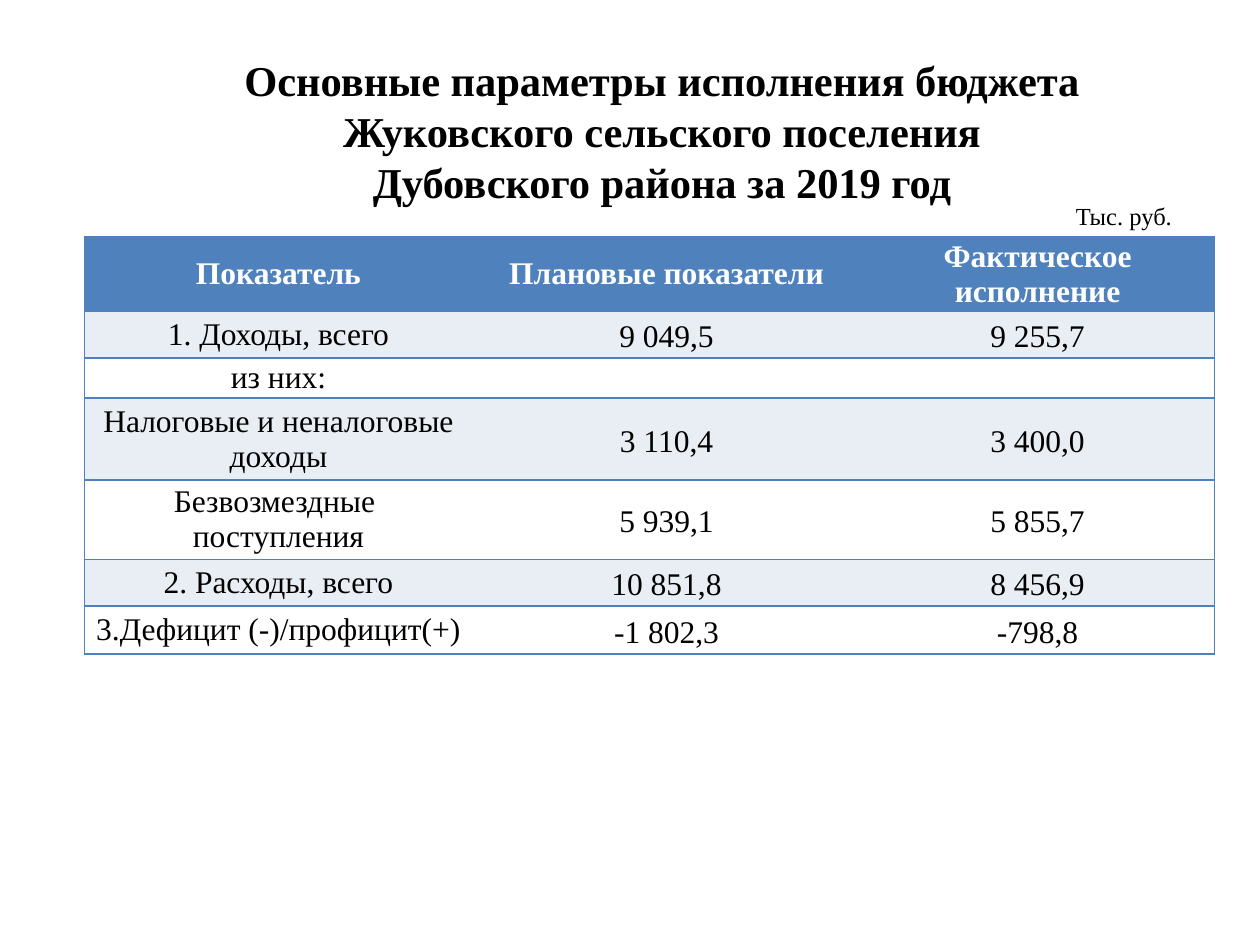
from pptx import Presentation
from pptx.dml.color import RGBColor
from pptx.enum.text import MSO_ANCHOR as Anchor, PP_ALIGN as Align
from pptx.oxml.ns import qn
from pptx.util import Inches, Pt
from lxml.etree import SubElement

BLUE = RGBColor(0x4F, 0x81, 0xBD)
PALE = RGBColor(0xE9, 0xED, 0xF4)
WHITE = RGBColor(0xFF, 0xFF, 0xFF)
BLACK = RGBColor(0, 0, 0)
FONT = "Times New Roman"

TITLE = ("Основные параметры исполнения бюджета\v"
         "Жуковского сельского поселения\v"
         "Дубовского района за 2019 год")
WIDTHS = [3.08, 3.08, 2.81]
HEIGHTS = [0.59, 0.37, 0.32, 0.65, 0.63, 0.37, 0.38]
ROWS = [
    ("Показатель", "Плановые показатели", "Фактическое исполнение"),
    ("1. Доходы, всего", "9 049,5", "9 255,7"),
    ("из них:", "", ""),
    ("Налоговые и неналоговые доходы", "3 110,4", "3 400,0"),
    ("Безвозмездные \nпоступления", "5 939,1", "5 855,7"),
    ("2. Расходы, всего", "10 851,8", "8 456,9"),
    ("3.Дефицит (-)/профицит(+)", "-1 802,3", "-798,8"),
]


def style(para, size, color=BLACK, bold=False, align=Align.CENTER):
    para.alignment = align
    font = para.font
    font.name, font.size, font.bold = FONT, Pt(size), bold
    font.color.rgb = color


def add_title(slide, left, top, width, height):
    title = slide.shapes.title
    title.left, title.top = Inches(left), Inches(top)
    title.width, title.height = Inches(width), Inches(height)
    frame = title.text_frame
    frame.text = TITLE
    frame.vertical_anchor = Anchor.TOP
    frame.margin_top, frame.margin_right = Inches(0.3), Inches(0.2)
    para = frame.paragraphs[0]
    style(para, 24.3, bold=True)
    para.line_spacing = Pt(29.1)


def add_unit(slide, left, top, width, height):
    box = slide.shapes.add_textbox(
        Inches(left), Inches(top), Inches(width), Inches(height))
    frame = box.text_frame
    frame.word_wrap = True
    frame.text = "Тыс. руб."
    style(frame.paragraphs[0], 14, align=Align.RIGHT)


def set_edges(cell, shown):
    """Draw the sides named in shown and hide the others."""
    props = cell._tc.get_or_add_tcPr()
    for side in "LRTB":
        line = SubElement(props, qn(f"a:ln{side}"), w=str(Pt(1)))
        if side in shown:
            fill = SubElement(line, qn("a:solidFill"))
            SubElement(fill, qn("a:srgbClr"), val=str(BLUE))
        else:
            SubElement(line, qn("a:noFill"))


def fill_cell(cell, text, row, col):
    head = row == 0
    set_edges(cell, "TB" + ("L", "", "R")[col])
    cell.fill.solid()
    cell.fill.fore_color.rgb = BLUE if head else PALE if row % 2 else WHITE
    cell.margin_left = cell.margin_right = 0
    cell.margin_top = cell.margin_bottom = 0
    cell.vertical_anchor = Anchor.MIDDLE
    cell.text = text
    for para in cell.text_frame.paragraphs:
        style(para, 18, WHITE if head else BLACK, head)
        if text and not head and col:
            para.line_spacing = 1.15


def add_budget(slide, left, top):
    frame = slide.shapes.add_table(
        len(ROWS), len(WIDTHS), Inches(left), Inches(top),
        Inches(sum(WIDTHS)), Inches(sum(HEIGHTS)))
    table = frame.table
    table.horz_banding = False
    for col, width in zip(table.columns, WIDTHS):
        col.width = Inches(width)
    for row, height in zip(table.rows, HEIGHTS):
        row.height = Inches(height)
    for r, texts in enumerate(ROWS):
        for c, text in enumerate(texts):
            fill_cell(table.cell(r, c), text, r, c)


def main():
    deck = Presentation()
    deck.slide_width, deck.slide_height = Inches(10), Inches(7.5)
    slide = deck.slides.add_slide(deck.slide_layouts[5])
    add_title(slide, 0.61, 0.13, 9.39, 1.02)
    add_budget(slide, 0.67, 1.88)
    add_unit(slide, 7.2, 1.55, 2.2, 0.34)
    deck.save("out.pptx")


if __name__ == "__main__":
    main()
